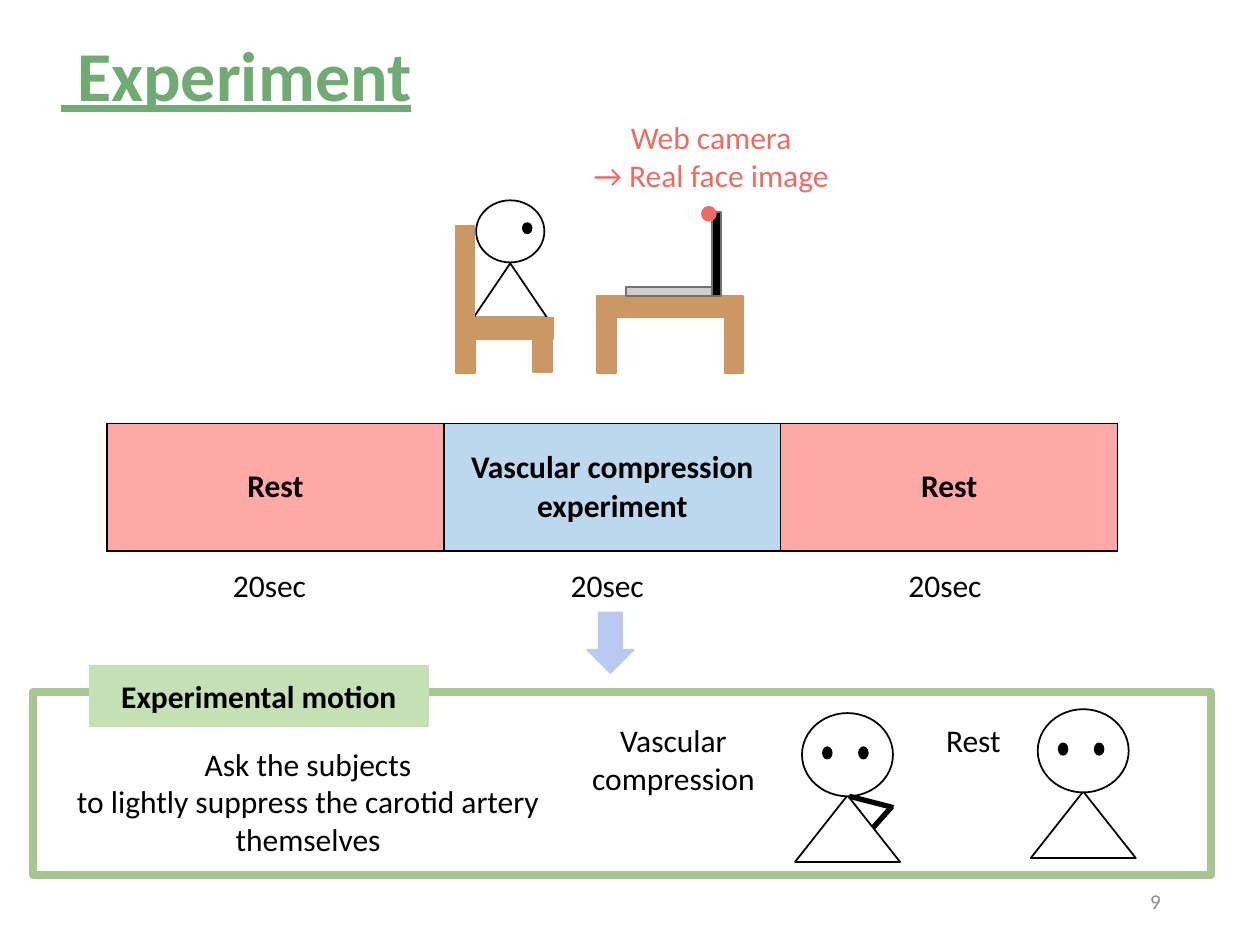
import pptx
import pptx.util
import pptx.dml.color
import pptx.enum.shapes
import pptx.enum.text
import pptx.oxml
import pptx.oxml.ns

Pt = pptx.util.Pt
SHAPE = pptx.enum.shapes.MSO_SHAPE
ALIGN = pptx.enum.text.PP_ALIGN
MIDDLE = pptx.enum.text.MSO_ANCHOR.MIDDLE
FONT = "Calibri"
COLORS = {
    "title": "70AB73", "accent": "EE6B64", "wood": "CB9763", "black": "000000",
    "white": "FFFFFF", "keys": "D0CECE", "edge": "767171", "rest": "FFA9A9",
    "compression": "BCD7EE", "frame": "A8C692", "label": "C5E0B4",
    "arrow": "BAC9EF", "number": "8C8C8C",
}


def rgb(name):
    """Return the named colour."""
    return pptx.dml.color.RGBColor.from_string(COLORS[name])


def write(tf, text, size=18, color="black", bold=False, align=ALIGN.CENTER):
    """Fill a text frame and format each of its runs."""
    tf.text = text
    for p in tf.paragraphs:
        p.alignment = align
        for r in p.runs:
            r.font.name = FONT
            r.font.size = Pt(size)
            r.font.bold = bold
            r.font.color.rgb = rgb(color)


def add_text(shapes, x, y, w, h, text, wrap=False, **style):
    """Add a text box."""
    tf = shapes.add_textbox(Pt(x), Pt(y), Pt(w), Pt(h)).text_frame
    tf.word_wrap = wrap
    write(tf, text, **style)
    return tf


def add_shape(shapes, kind, x, y, w, h, fill, line=None, weight=1):
    """Add a flat preset shape, outlined in its own fill unless told otherwise."""
    sp = shapes.add_shape(kind, Pt(x), Pt(y), Pt(w), Pt(h))
    sp.shadow.inherit = False
    if fill:
        sp.fill.solid()
        sp.fill.fore_color.rgb = rgb(fill)
    else:
        sp.fill.background()
    sp.line.color.rgb = rgb(line or fill)
    sp.line.width = Pt(weight)
    return sp


def add_line(shapes, x1, y1, x2, y2, weight):
    """Add a straight black line."""
    ln = shapes.add_connector(pptx.enum.shapes.MSO_CONNECTOR.STRAIGHT,
                              Pt(x1), Pt(y1), Pt(x2), Pt(y2))
    ln.line.color.rgb = rgb("black")
    ln.line.width = Pt(weight)
    ln._element.spPr.append(pptx.oxml.parse_xml(
        "<a:effectLst %s/>" % pptx.oxml.ns.nsdecls("a")))


def add_sitter(shapes, x, y):
    """Draw the subject in side view on a chair."""
    add_shape(shapes, SHAPE.OVAL, x + 11.5, y, 39, 35.5, "white", "black")
    add_shape(shapes, SHAPE.OVAL, x + 38.2, y + 13, 5, 5.8, "black")
    add_shape(shapes, SHAPE.ISOSCELES_TRIANGLE, x + 10, y + 36, 42, 31, "white", "black")
    for dx, dy, w, h in ((0, 67, 55.4, 12.2), (0, 14.4, 10.4, 52.6),
                         (0, 75.5, 10.8, 23), (44, 75, 10.8, 23)):
        add_shape(shapes, SHAPE.RECTANGLE, x + dx, y + dy, w, h, "wood")


def add_desk(shapes, x, y):
    """Draw the desk with a laptop and its web camera."""
    add_shape(shapes, SHAPE.RECTANGLE, x, y, 83.5, 12.2, "wood")
    for dx in (0, 72.7):
        add_shape(shapes, SHAPE.RECTANGLE, x + dx, y + 12.2, 10.8, 31.7, "wood")
    add_shape(shapes, SHAPE.RECTANGLE, x + 16.5, y - 5, 49, 5, "keys", "edge")
    add_shape(shapes, SHAPE.RECTANGLE, x + 65.4, y - 48, 5.5, 48, "black", "edge")
    add_shape(shapes, SHAPE.OVAL, x + 59.8, y - 51, 8, 8, "accent")


def add_scene(s, x, y):
    """Draw the measuring scene with its caption."""
    shapes = s.shapes.add_group_shape().shapes
    add_sitter(shapes, x, y + 50.5)
    add_desk(shapes, x + 80.7, y + 105.2)
    add_text(shapes, x + 60.5, y, 170.6, 51, "Web camera\n→ Real face image",
             wrap=True, color="accent")


def add_timeline(s, x, y, w, h):
    """Add the phase table with a duration under each phase."""
    phases = (("Rest", "rest"), ("Vascular compression experiment", "compression"),
              ("Rest", "rest"))
    step = w / len(phases)
    table = s.shapes.add_table(1, len(phases), Pt(x), Pt(y), Pt(w), Pt(h)).table
    table.first_row = table.horz_banding = False
    for i, (text, fill) in enumerate(phases):
        table.columns[i].width = Pt(step)
        cell = table.cell(0, i)
        cell.vertical_anchor = MIDDLE
        write(cell.text_frame, text, bold=True)
        tc_pr = cell._tc.get_or_add_tcPr()
        for side in ("lnL", "lnR", "lnT", "lnB"):
            tc_pr.append(pptx.oxml.parse_xml(
                '<a:%s %s w="12700"><a:solidFill><a:srgbClr val="%s"/></a:solidFill></a:%s>'
                % (side, pptx.oxml.ns.nsdecls("a"), COLORS["black"], side)))
        cell.fill.solid()
        cell.fill.fore_color.rgb = rgb(fill)
        add_text(s.shapes, x + 64.8 + i * 193, y + h + 5, 57, 29, "20sec", align=ALIGN.LEFT)


def add_figure(s, x, y, hand=False):
    """Draw a subject from the front, with a hand on the neck if asked."""
    shapes = s.shapes.add_group_shape().shapes
    add_shape(shapes, SHAPE.ISOSCELES_TRIANGLE, x, y + 47, 60, 38, "white", "black")
    add_shape(shapes, SHAPE.OVAL, x + 4, y, 52, 47.5, "white", "black")
    for dx in (16, 36.6):
        add_shape(shapes, SHAPE.OVAL, x + dx, y + 19.5, 5, 6.5, "black")
    if hand:
        add_line(shapes, x + 44.6, y + 65.5, x + 55.4, y + 53.3, 3)
        add_line(shapes, x + 31, y + 47.5, x + 56.2, y + 54, 3)


def add_motion(s, x, y, w, h):
    """Add the framed panel that explains the motion."""
    add_shape(s.shapes, SHAPE.RECTANGLE, x, y, w, h, None, "frame", 4.5)
    sp = add_shape(s.shapes, SHAPE.RECTANGLE, x + 32.4, y - 15, 193.7, 34.5, "label")
    sp.text_frame.vertical_anchor = MIDDLE
    write(sp.text_frame, "Experimental motion", bold=True)
    add_text(s.shapes, x + 16.6, y + 26.7, 281.5, 73,
             "Ask the subjects\nto lightly suppress the carotid artery\nthemselves")
    add_text(s.shapes, x + 311.8, y + 13, 108.7, 51, "Vascular\ncompression")
    add_text(s.shapes, x + 514.8, y + 13, 46, 29, "Rest", align=ALIGN.LEFT)
    add_figure(s, x + 435.6, y + 12.2, hand=True)
    add_figure(s, x + 570.3, y + 10)


def main():
    """Build the slide."""
    prs = pptx.Presentation()
    prs.slide_width, prs.slide_height = Pt(720), Pt(540)
    s = prs.slides.add_slide(prs.slide_layouts[6])
    tf = add_text(s.shapes, 28, 14.4, 217, 55.4, " Experiment",
                  size=40, color="title", bold=True, align=ALIGN.LEFT)
    tf.paragraphs[0].runs[0].font.underline = True
    add_scene(s, 260.6, 64)
    add_timeline(s, 61.2, 242, 577.5, 72.8)
    add_shape(s.shapes, SHAPE.DOWN_ARROW, 335.5, 350, 26.6, 34.6, "arrow")
    add_motion(s, 18.7, 395.3, 673.2, 105)
    tf = add_text(s.shapes, 508.3, 500.4, 162, 28.8, "9", wrap=True,
                  size=12, color="number", align=ALIGN.RIGHT)
    tf.vertical_anchor = MIDDLE
    prs.save("out.pptx")


if __name__ == "__main__":
    main()
